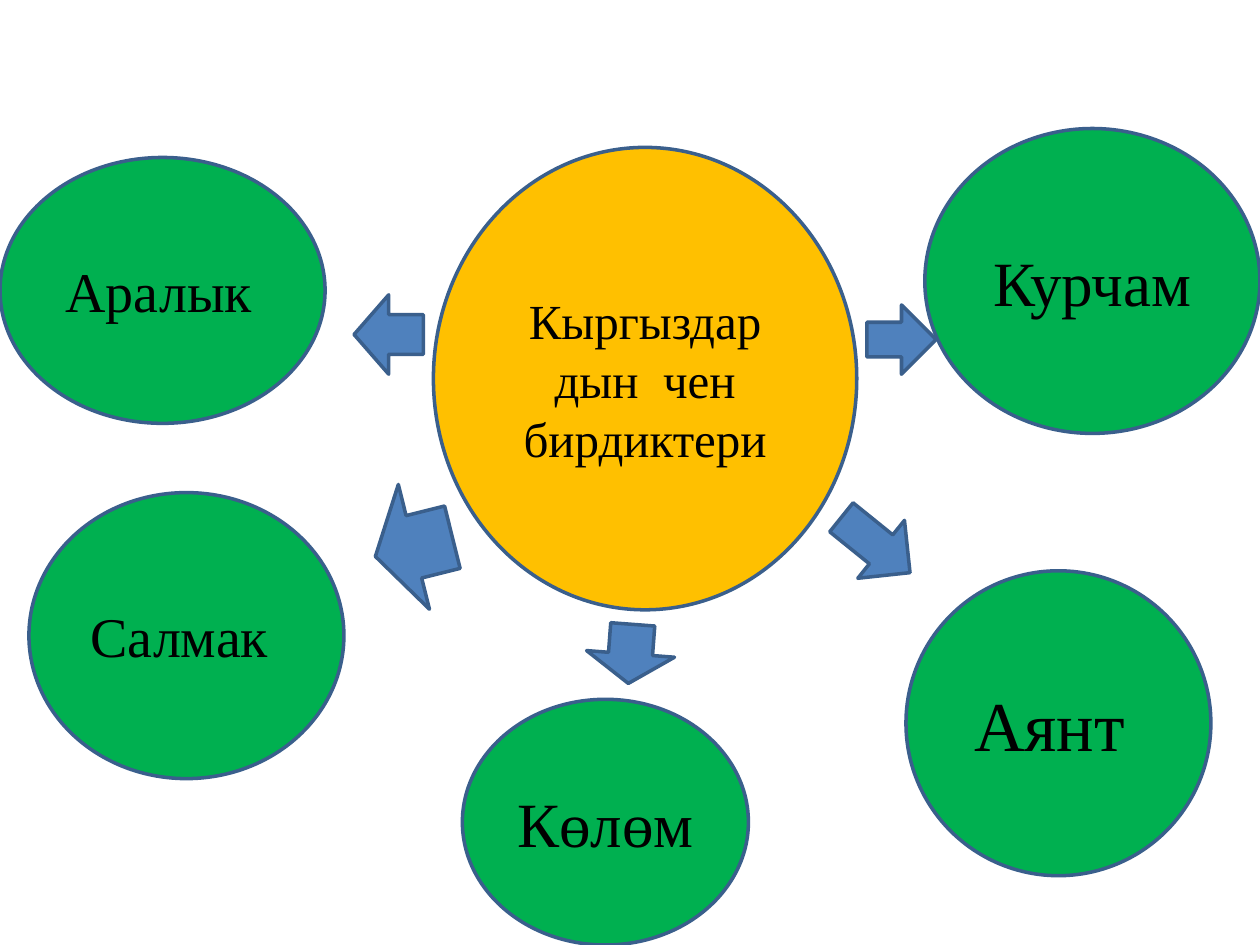
"""Build a slide of Kyrgyz units of measure around a central circle."""
from dataclasses import dataclass

from pptx import Presentation
from pptx.dml.color import RGBColor
from pptx.enum import shapes, text
from pptx.util import Inches, Pt

KIND = shapes.MSO_SHAPE
GREEN, GOLD, BLUE, EDGE = "00B050", "FFC000", "4F81BD", "3A5F8C"
BLACK, WHITE = "000000", "FFFFFF"


@dataclass(frozen=True)
class Run:
    words: str
    size: int
    font: str = "Times New Roman"
    color: str = BLACK


@dataclass(frozen=True)
class Oval:
    box: tuple[float, float, float, float]
    runs: tuple[Run, ...]
    fill: str = GREEN


@dataclass(frozen=True)
class Arrow:
    box: tuple[float, float, float, float]
    turn: float = 0
    kind: KIND = KIND.LEFT_ARROW


OVALS = (
    Oval((3.44, 1.17, 3.36, 3.67), (Run("Кыргыздар дын  чен бирдиктери", 28),), GOLD),
    Oval((7.34, 1.02, 2.66, 2.42), (Run("Курчам ", 36),)),
    Oval((0.23, 3.91, 2.5, 2.27), (Run("Салмак ", 32),)),
    Oval((3.67, 5.55, 2.27, 1.95), (Run("Көлөм ", 36),)),
    Oval((7.19, 4.53, 2.42, 2.42), (Run("Аянт ", 40),)),
    Oval((0, 1.25, 2.58, 2.11), (Run("Аралык", 32), Run(" ", 18, "Calibri", WHITE))),
)
ARROWS = (
    Arrow((2.81, 2.34, 0.55, 0.63)),
    Arrow((2.97, 3.83, 0.63, 1.02), 346),
    Arrow((4.77, 4.84, 0.47, 0.7), 274.3),
    Arrow((6.6, 4.03, 0.7, 0.59), 218.9),
    Arrow((6.88, 2.42, 0.55, 0.55), kind=KIND.RIGHT_ARROW),
)


def paint(target, color: str) -> None:
    """Set a solid fill from a hex string."""
    target.solid()
    target.fore_color.rgb = RGBColor.from_string(color)


def add_form(slide, kind: KIND, box: tuple, fill: str):
    """Add a filled and outlined preset shape."""
    form = slide.shapes.add_shape(kind, *map(Inches, box))
    form.shadow.inherit = False
    paint(form.fill, fill)
    paint(form.line.fill, EDGE)
    form.line.width = Pt(2)
    return form


def draw_oval(slide, oval: Oval) -> None:
    """Draw a labelled oval."""
    frame = add_form(slide, KIND.OVAL, oval.box, oval.fill).text_frame
    frame.word_wrap = True
    frame.vertical_anchor = text.MSO_ANCHOR.MIDDLE
    para = frame.paragraphs[0]
    para.alignment = text.PP_ALIGN.CENTER
    for item in oval.runs:
        run = para.add_run()
        run.text = item.words
        run.font.size = Pt(item.size)
        run.font.name = item.font
        paint(run.font.fill, item.color)


def draw_arrow(slide, arrow: Arrow) -> None:
    """Draw a turned block arrow."""
    add_form(slide, arrow.kind, arrow.box, BLUE).rotation = arrow.turn


def main() -> None:
    """Build and save the slide."""
    deck = Presentation()
    deck.slide_width, deck.slide_height = Inches(10), Inches(7.5)
    slide = deck.slides.add_slide(deck.slide_layouts[6])
    for oval in OVALS:
        draw_oval(slide, oval)
    for arrow in ARROWS:
        draw_arrow(slide, arrow)
    deck.save("out.pptx")


if __name__ == "__main__":
    main()
